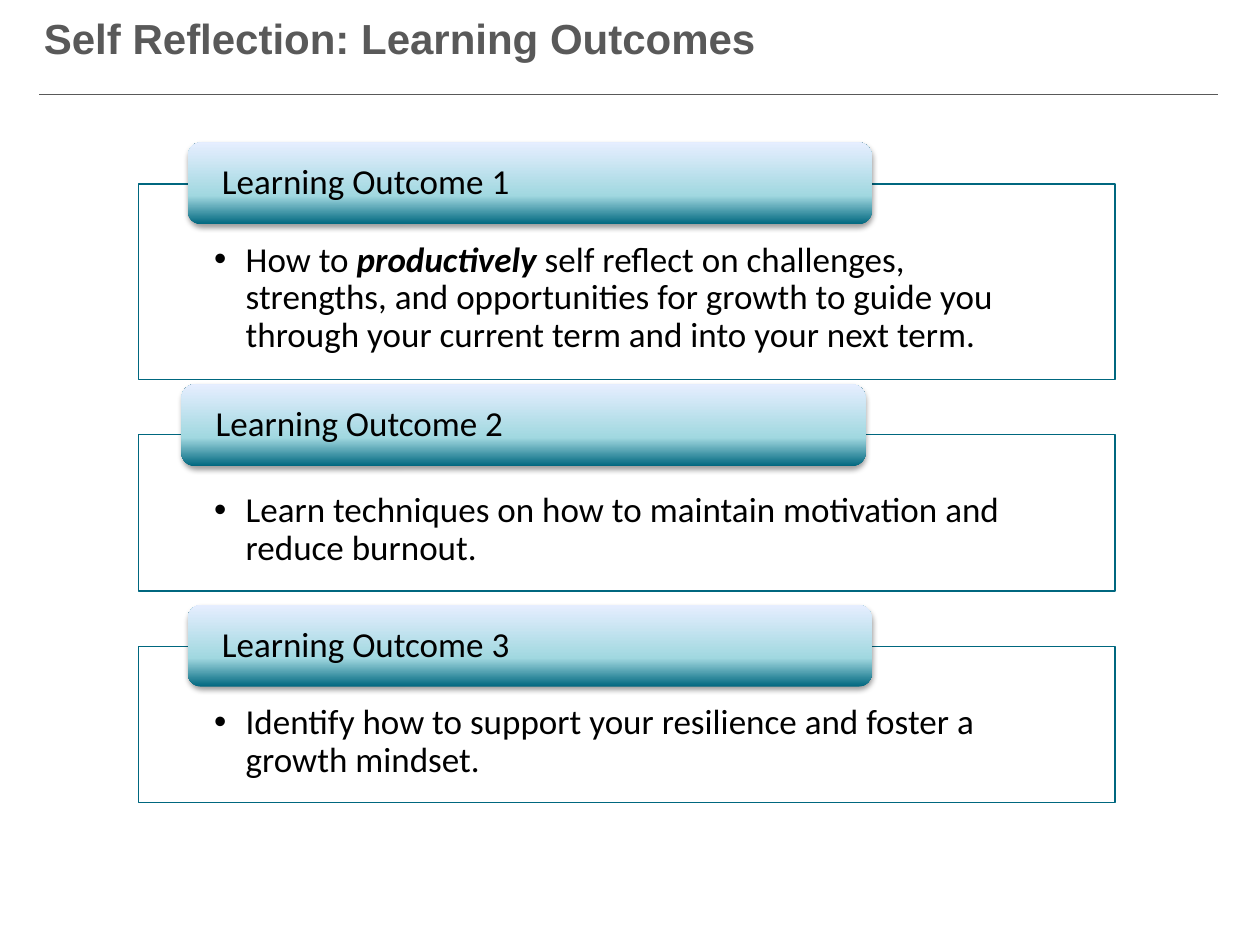
from dataclasses import dataclass

from lxml.etree import SubElement as Sub
from pptx import Presentation
from pptx.dml.color import RGBColor
from pptx.enum.shapes import MSO_CONNECTOR as Line, MSO_SHAPE as Kind
from pptx.enum.text import MSO_ANCHOR as Anchor, PP_ALIGN as Align
from pptx.oxml.ns import qn
from pptx.util import Inches, Pt

GRAY = RGBColor(0x59, 0x59, 0x59)
TEAL = RGBColor(0x00, 0x67, 0x7F)
AQUA = RGBColor(0xA1, 0xD8, 0xE0)
PALE = RGBColor(0xE6, 0xEE, 0xFF)
WHITE = RGBColor(0xFF, 0xFF, 0xFF)
BLACK = RGBColor(0x00, 0x00, 0x00)

STOPS = ((0, TEAL), (35, AQUA), (100, PALE))
BODY = {"name": "Calibri", "size": Pt(20)}
HEAD = {"name": "Arial", "size": Pt(24), "bold": True}
STRONG = {"bold": True, "italic": True}


@dataclass
class Goal:
    label: str
    runs: list[tuple[str, dict]]
    top: float
    height: float
    tab_left: float
    tab_top: float


GOALS = [
    Goal("Learning Outcome 1",
         [("How to ", {}), ("productively", STRONG),
          (" self reflect on challenges, strengths, and opportunities for growth "
           "to guide you through your current term and into your next term.", {})],
         1.46, 1.55, 1.49, 1.13),
    Goal("Learning Outcome 2",
         [("Learn techniques on how to maintain motivation and reduce burnout.", {})],
         3.45, 1.24, 1.44, 3.05),
    Goal("Learning Outcome 3",
         [("Identify how to support your resilience and foster a growth mindset.", {})],
         5.13, 1.24, 1.49, 4.8),
]


def style(item, values: dict) -> None:
    for key, value in values.items():
        setattr(item, key, value)


def setup(shape, left: float, top: float, right: float, low: float, anchor):
    """Set the insets and anchor, and return the first paragraph."""
    frame = shape.text_frame
    style(frame, {"word_wrap": True, "vertical_anchor": anchor,
                  "margin_left": Inches(left), "margin_top": Inches(top),
                  "margin_right": Inches(right), "margin_bottom": Inches(low)})
    para = frame.paragraphs[0]
    para.alignment = Align.LEFT
    return para


def write(para, text: str, color: RGBColor, *looks: dict) -> None:
    run = para.add_run()
    run.text = text
    for look in looks:
        style(run.font, look)
    run.font.color.rgb = color


def add_box(slide, kind, left: float, top: float, width: float, height: float):
    box = slide.shapes.add_shape(
        kind, Inches(left), Inches(top), Inches(width), Inches(height))
    box.shadow.inherit = False
    return box


def add_frame(slide, goal: Goal) -> None:
    box = add_box(slide, Kind.RECTANGLE, 1.1, goal.top, 7.75, goal.height)
    box.fill.solid()
    box.fill.fore_color.rgb = WHITE
    tint = box._element.spPr.find(f"{qn('a:solidFill')}/{qn('a:srgbClr')}")
    Sub(tint, qn("a:alpha"), val="90000")
    box.line.color.rgb = TEAL
    box.line.width = Pt(0.75)

    para = setup(box, 0.6, 0.46, 0.6, 0.16, Anchor.TOP)
    props = para._p.get_or_add_pPr()
    props.set("marL", str(Inches(0.25)))
    props.set("indent", str(Inches(-0.25)))
    Sub(props, qn("a:buFont"), typeface="Arial")
    Sub(props, qn("a:buChar"), char="•")
    para.line_spacing = 0.9
    for text, look in goal.runs:
        write(para, text, BLACK, BODY, look)


def add_tab(slide, goal: Goal) -> None:
    tab = add_box(slide, Kind.ROUNDED_RECTANGLE, goal.tab_left, goal.tab_top, 5.43, 0.65)
    tab.line.fill.background()

    # Gradient from dark at the bottom to pale at the top
    tab.fill.gradient()
    tab.fill.gradient_angle = 90
    props = tab._element.spPr
    stops = props.find(f"{qn('a:gradFill')}/{qn('a:gsLst')}")
    for old in list(stops):
        stops.remove(old)
    for place, color in STOPS:
        stop = Sub(stops, qn("a:gs"), pos=str(place * 1000))
        Sub(stop, qn("a:srgbClr"), val=str(color))

    # Soft shadow below
    glow = Sub(props.find(qn("a:effectLst")), qn("a:outerShdw"),
               blurRad=str(Pt(3.1)), dist=str(Pt(1.6)), dir="5400000", rotWithShape="0")
    shade = Sub(glow, qn("a:srgbClr"), val=str(BLACK))
    Sub(shade, qn("a:alpha"), val="38000")

    para = setup(tab, 0.24, 0, 0.24, 0, Anchor.MIDDLE)
    para.line_spacing = 0.9
    write(para, goal.label, BLACK, BODY)


def add_head(slide) -> None:
    rule = slide.shapes.add_connector(
        Line.STRAIGHT, Inches(0.31), Inches(0.75), Inches(9.67), Inches(0.75))
    rule.line.color.rgb = GRAY
    rule.line.width = Pt(0.75)
    Sub(rule._element.spPr, qn("a:effectLst"))
    title = slide.shapes.add_textbox(
        Inches(0.25), Inches(0.05), Inches(9.45), Inches(0.97))
    para = setup(title, 0.1, 0.05, 0.1, 0.05, Anchor.TOP)
    write(para, "Self Reflection: Learning Outcomes", GRAY, HEAD)


def main() -> None:
    deck = Presentation()
    deck.slide_width, deck.slide_height = Inches(10), Inches(7.5)
    slide = deck.slides.add_slide(deck.slide_layouts[6])
    add_head(slide)
    for goal in GOALS:
        add_frame(slide, goal)
        add_tab(slide, goal)
    deck.save("out.pptx")


if __name__ == "__main__":
    main()
